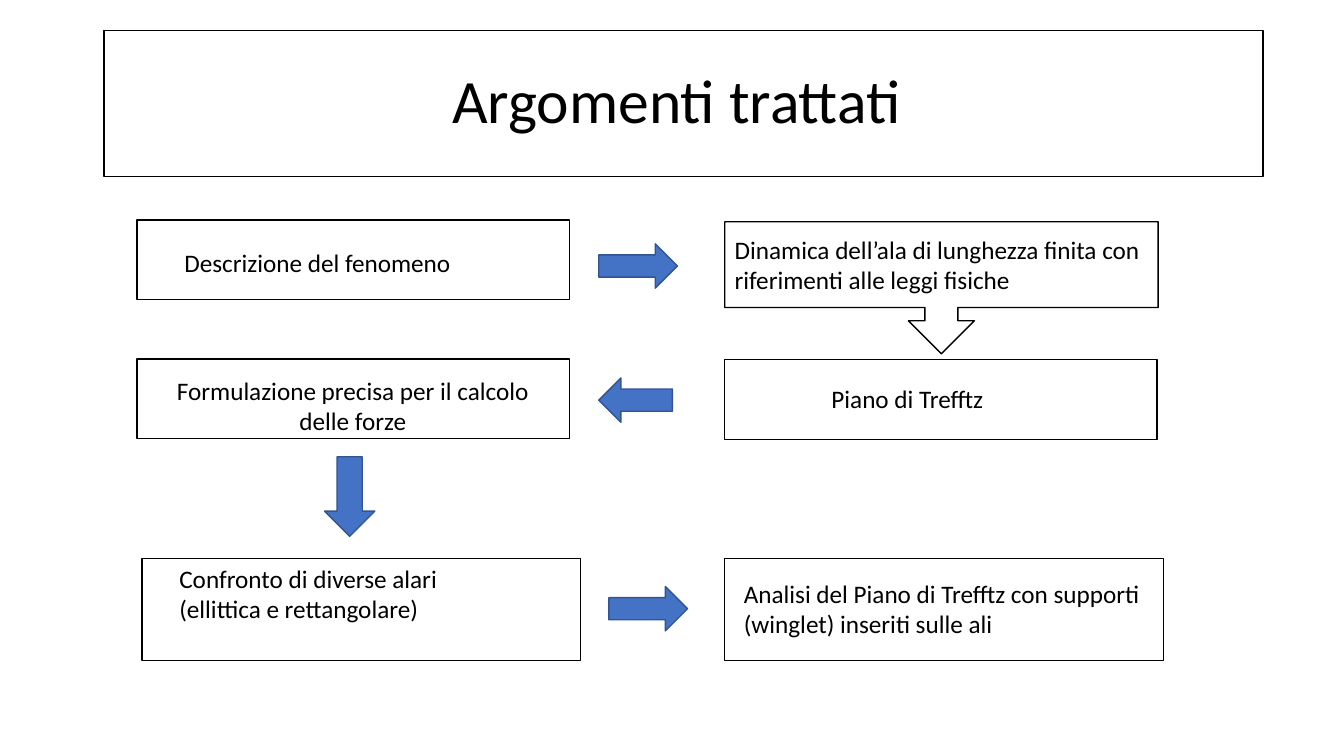
from dataclasses import dataclass

from pptx import Presentation
from pptx.dml.color import RGBColor
from pptx.enum.shapes import MSO_SHAPE
from pptx.enum.text import MSO_ANCHOR, PP_ALIGN
from pptx.shapes.autoshape import Shape
from pptx.slide import Slide
from pptx.util import Pt

BLACK = RGBColor(0x00, 0x00, 0x00)
WHITE = RGBColor(0xFF, 0xFF, 0xFF)
ARROW_BLUE = RGBColor(0x44, 0x72, 0xC4)
ARROW_EDGE = RGBColor(0x32, 0x54, 0x91)
FONT_NAME = "Calibri"


@dataclass(frozen=True)
class Area:
    left: float
    top: float
    width: float
    height: float


@dataclass(frozen=True)
class Figure:
    kind: MSO_SHAPE
    area: Area
    fill: RGBColor = WHITE
    edge: RGBColor = BLACK


@dataclass(frozen=True)
class Label:
    text: str
    area: Area
    alignment: PP_ALIGN = PP_ALIGN.LEFT


TITLE = Figure(MSO_SHAPE.RECTANGLE, Area(74.2, 21.6, 828, 104.4))
CALLOUT = Figure(MSO_SHAPE.DOWN_ARROW_CALLOUT, Area(517.7, 158.4, 309.6, 94.3))

FRAMES = [
    Area(97.9, 157, 308.9, 56.9),
    Area(517.7, 257, 308.9, 56.9),
    Area(97.9, 256.3, 308.9, 56.9),
    Area(101.5, 398.9, 313.2, 72.7),
    Area(517.7, 398.9, 313.2, 72.7),
]

ARROWS = [
    (MSO_SHAPE.RIGHT_ARROW, Area(427.7, 174.2, 56.2, 31.7)),
    (MSO_SHAPE.LEFT_ARROW, Area(427.7, 270, 52.6, 31.7)),
    (MSO_SHAPE.DOWN_ARROW, Area(231.8, 326.2, 36, 56.9)),
    (MSO_SHAPE.RIGHT_ARROW, Area(434.9, 419, 56.2, 31.7)),
]

LABELS = [
    Label("Descrizione del fenomeno", Area(124.6, 172.8, 250.6, 28.8)),
    Label("Piano di Trefftz ", Area(508.3, 270, 283.7, 28.8), PP_ALIGN.CENTER),
    Label("Formulazione precisa per il calcolo delle forze",
          Area(110.2, 264.2, 283.7, 51.1), PP_ALIGN.CENTER),
    Label("Confronto di diverse alari\n(ellittica e rettangolare)",
          Area(121, 398.9, 306, 51.1)),
    Label("Analisi del Piano di Trefftz con supporti (winglet) inseriti sulle ali",
          Area(524.2, 409.7, 306, 51.1)),
]


def place(area: Area) -> tuple[Pt, Pt, Pt, Pt]:
    return Pt(area.left), Pt(area.top), Pt(area.width), Pt(area.height)


def draw_figure(slide: Slide, figure: Figure) -> Shape:
    shape = slide.shapes.add_shape(figure.kind, *place(figure.area))
    shape.shadow.inherit = False
    shape.fill.solid()
    shape.fill.fore_color.rgb = figure.fill
    shape.line.color.rgb = figure.edge
    shape.line.width = Pt(1)
    return shape


def write_text(box: Shape, text: str, size: float, alignment: PP_ALIGN,
               anchor: MSO_ANCHOR, line_spacing: float = 1.0) -> None:
    frame = box.text_frame
    frame.text = text
    frame.word_wrap = True
    frame.vertical_anchor = anchor
    for para in frame.paragraphs:
        para.alignment = alignment
        para.line_spacing = line_spacing
        for span in para.runs:
            span.font.name = FONT_NAME
            span.font.size = Pt(size)
            span.font.color.rgb = BLACK


def draw_label(slide: Slide, label: Label) -> None:
    box = slide.shapes.add_textbox(*place(label.area))
    write_text(box, label.text, 18, label.alignment, MSO_ANCHOR.TOP)


def main() -> None:
    deck = Presentation()
    deck.slide_width, deck.slide_height = Pt(960), Pt(540)
    page = deck.slides.add_slide(deck.slide_layouts[6])

    title = draw_figure(page, TITLE)
    write_text(title, "Argomenti trattati ", 44, PP_ALIGN.CENTER,
               MSO_ANCHOR.MIDDLE, 0.9)

    callout = draw_figure(page, CALLOUT)
    write_text(callout,
               "Dinamica dell’ala di lunghezza finita con riferimenti alle leggi fisiche",
               18, PP_ALIGN.LEFT, MSO_ANCHOR.MIDDLE)

    for area in FRAMES:
        draw_figure(page, Figure(MSO_SHAPE.RECTANGLE, area))
    for kind, area in ARROWS:
        draw_figure(page, Figure(kind, area, ARROW_BLUE, ARROW_EDGE))
    for label in LABELS:
        draw_label(page, label)

    deck.save("out.pptx")


if __name__ == "__main__":
    main()
